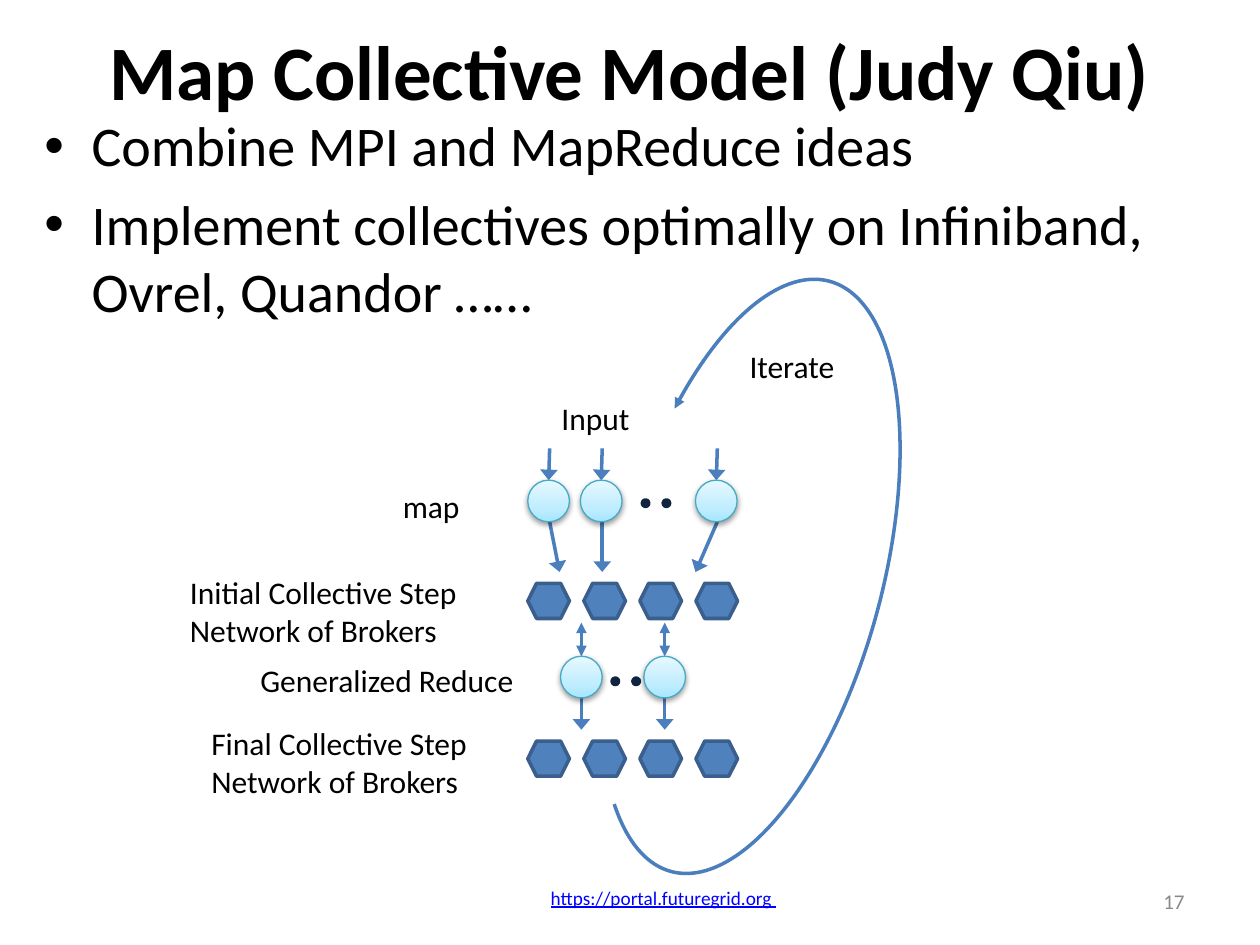
from copy import deepcopy
from dataclasses import dataclass

from lxml import etree
from pptx import Presentation
from pptx import util as u
from pptx.dml.color import RGBColor
from pptx.enum import shapes, text
from pptx.oxml.ns import qn

MSO = shapes.MSO_SHAPE
ALIGN = text.PP_ALIGN


@dataclass(frozen=True)
class Theme:
    font: str = "Calibri"
    ink: str = "000000"
    link: str = "0000FF"
    muted: str = "898989"
    line: str = "4B7EBC"
    broker: str = "4F81BD"
    broker_edge: str = "3A5F8C"
    task_edge: str = "46AAC5"
    task: tuple = ((0, "A7E6FF"), (0.35, "C1EDFF"), (1, "E7F8FF"))
    dot: str = "0F243E"
    title_size: int = 44
    body_size: int = 32
    label_size: int = 18
    number_size: int = 12
    link_size: int = 11
    stroke: float = 2


def rgb(value):
    return RGBColor.from_string(value)


class Deck:
    def __init__(self, slide, theme):
        self.s, self.t = slide, theme

    def box(self, sp, left, top, width, height):
        sp.left, sp.top, sp.width, sp.height = map(u.Cm, (left, top, width, height))

    def style(self, p, size, color, bold=None):
        p.font.name, p.font.size, p.font.bold = self.t.font, u.Pt(size), bold
        p.font.color.rgb = rgb(color)

    def title(self, words, *place):
        sp = self.s.shapes.title
        self.box(sp, *place)
        tf = sp.text_frame
        tf.text = words
        tf.auto_size = text.MSO_AUTO_SIZE.NONE
        tf.vertical_anchor = text.MSO_ANCHOR.MIDDLE
        p = tf.paragraphs[0]
        p.alignment = ALIGN.CENTER
        self.style(p, self.t.title_size, self.t.ink, True)

    def bullets(self, items, *place):
        sp = self.s.placeholders[1]
        self.box(sp, *place)
        tf = sp.text_frame
        tf.text = "\n".join(items)
        tf.auto_size = text.MSO_AUTO_SIZE.NONE
        for i, p in enumerate(tf.paragraphs):
            p.space_before = u.Pt(6.4 if i else 0)
            self.style(p, self.t.body_size, self.t.ink)

    def label(self, words, *place):
        sp = self.s.shapes.add_textbox(*map(u.Cm, place))
        tf = sp.text_frame
        tf.word_wrap = False
        tf.auto_size = text.MSO_AUTO_SIZE.SHAPE_TO_FIT_TEXT
        p = tf.paragraphs[0]
        p.text = words
        self.style(p, self.t.label_size, self.t.ink)

    def footer(self, words, align, size, color, *place, underline=None):
        sp = self.s.shapes.add_textbox(*map(u.Cm, place))
        tf = sp.text_frame
        tf.word_wrap = True
        tf.vertical_anchor = text.MSO_ANCHOR.MIDDLE
        p = tf.paragraphs[0]
        p.text, p.alignment = words, align
        self.style(p, size, color)
        p.font.underline = underline

    def shape(self, kind, edge, width, *place):
        sp = self.s.shapes.add_shape(kind, *map(u.Cm, place))
        sp.shadow.inherit = False
        sp.line.color.rgb, sp.line.width = rgb(edge), u.Pt(width)
        return sp

    def solid(self, kind, color, edge, *place):
        sp = self.shape(kind, edge, self.t.stroke, *place)
        sp.fill.solid()
        sp.fill.fore_color.rgb = rgb(color)

    def task(self, cx, top, size):
        sp = self.shape(MSO.OVAL, self.t.task_edge, 0.75, cx - size / 2, top, size, size)
        # Three-stop gradient, darkest at the bottom
        sp.fill.gradient()
        sp.fill.gradient_angle = 90
        stops = sp._element.spPr.find(".//" + qn("a:gsLst"))
        stops.insert(1, deepcopy(stops[0]))
        for stop, (pos, color) in zip(sp.fill.gradient_stops, self.t.task):
            stop.position, stop.color.rgb = pos, rgb(color)
        # Soft shadow below
        effects = sp._element.spPr.find(qn("a:effectLst"))
        shadow = etree.SubElement(effects, qn("a:outerShdw"), blurRad="40000",
                                  dist="20000", dir="5400000", rotWithShape="0")
        color = etree.SubElement(shadow, qn("a:srgbClr"), val="000000")
        etree.SubElement(color, qn("a:alpha"), val="38000")

    def heads(self, sp, ends, width="med"):
        ln = sp.line._get_or_add_ln()
        for end in ends:
            etree.SubElement(ln, qn("a:" + end), type="triangle", w=width, len="med")

    def arrow(self, x1, y1, x2, y2, both=False):
        sp = self.s.shapes.add_connector(shapes.MSO_CONNECTOR.STRAIGHT,
                                         *map(u.Cm, (x1, y1, x2, y2)))
        sp.line.color.rgb, sp.line.width = rgb(self.t.line), u.Pt(self.t.stroke)
        if both:
            self.heads(sp, ("headEnd", "tailEnd"))
        else:
            self.heads(sp, ("tailEnd",), "lg")
        etree.SubElement(sp._element.spPr, qn("a:effectLst"))

    def loop(self, *place):
        sp = self.shape(MSO.ARC, self.t.line, self.t.stroke, *place)
        sp.fill.background()
        sp.rotation = 15
        sp.adjustments[0], sp.adjustments[1] = 138.44, 63.52
        self.heads(sp, ("headEnd",))


def main():
    prs = Presentation()
    prs.slide_width, prs.slide_height = u.Cm(25.4), u.Cm(19.05)
    t = Theme()
    d = Deck(prs.slides.add_slide(prs.slide_layouts[1]), t)

    # Title, list and footer
    d.title("Map Collective Model (Judy Qiu)", 1.27, 0.05, 22.86, 2.72)
    d.bullets(("Combine MPI and MapReduce ideas",
               "Implement collectives optimally on Infiniband, Ovrel, Quandor ……"),
              0.64, 2.11, 22.86, 1.9)
    d.footer("https://portal.futuregrid.org ", ALIGN.CENTER, t.link_size, t.link,
             8.74, 17.58, 9.27, 1.02, underline=True)
    d.footer("17", ALIGN.RIGHT, t.number_size, t.muted, 18.21, 17.65, 5.92, 1.02)

    # Iteration loop
    d.loop(12.47, 5.46, 5.31, 12.32)

    # Map tasks with their inputs and outputs
    size, map_top, reduce_top = 0.84, 9.68, 13.23
    for cx, out_x in ((11.06, 11.28), (12.12, 12.14), (14.44, 14.02)):
        d.arrow(cx + 0.02, 9.04, cx, map_top)
        d.arrow(cx + 0.02, map_top + size, out_x, 11.53)
        d.task(cx, map_top, size)

    # Reduce tasks between the two broker rows
    for cx in (11.72, 13.4):
        d.arrow(cx, 12.55, cx, reduce_top, both=True)
        d.arrow(cx, reduce_top + size, cx, 14.71)
        d.task(cx, reduce_top, size)

    # Ellipsis dots
    for left, top in ((12.95, 10.08), (12.34, 13.67)):
        for i in range(2):
            d.solid(MSO.OVAL, t.dot, t.dot, left + 0.42 * i, top, 0.13, 0.13)

    # Broker rows
    for top in (11.76, 14.94):
        for i in range(4):
            d.solid(MSO.HEXAGON, t.broker, t.broker_edge,
                    10.64 + 1.13 * i, top, 0.84, 0.71)

    # Labels
    for words, *place in (
        ("Iterate", 14.86, 6.88, 2.24, 1.02),
        ("Input", 11.07, 7.92, 1.91, 1.02),
        ("map", 7.87, 9.7, 1.68, 1.02),
        ("Initial Collective Step\vNetwork of Brokers", 3.58, 11.43, 5.97, 1.8),
        ("Generalized Reduce", 5, 13.21, 5.72, 1.02),
        ("Final Collective Step\vNetwork of Brokers", 4.01, 14.48, 5.74, 1.8),
    ):
        d.label(words, *place)

    prs.save("out.pptx")


if __name__ == "__main__":
    main()
